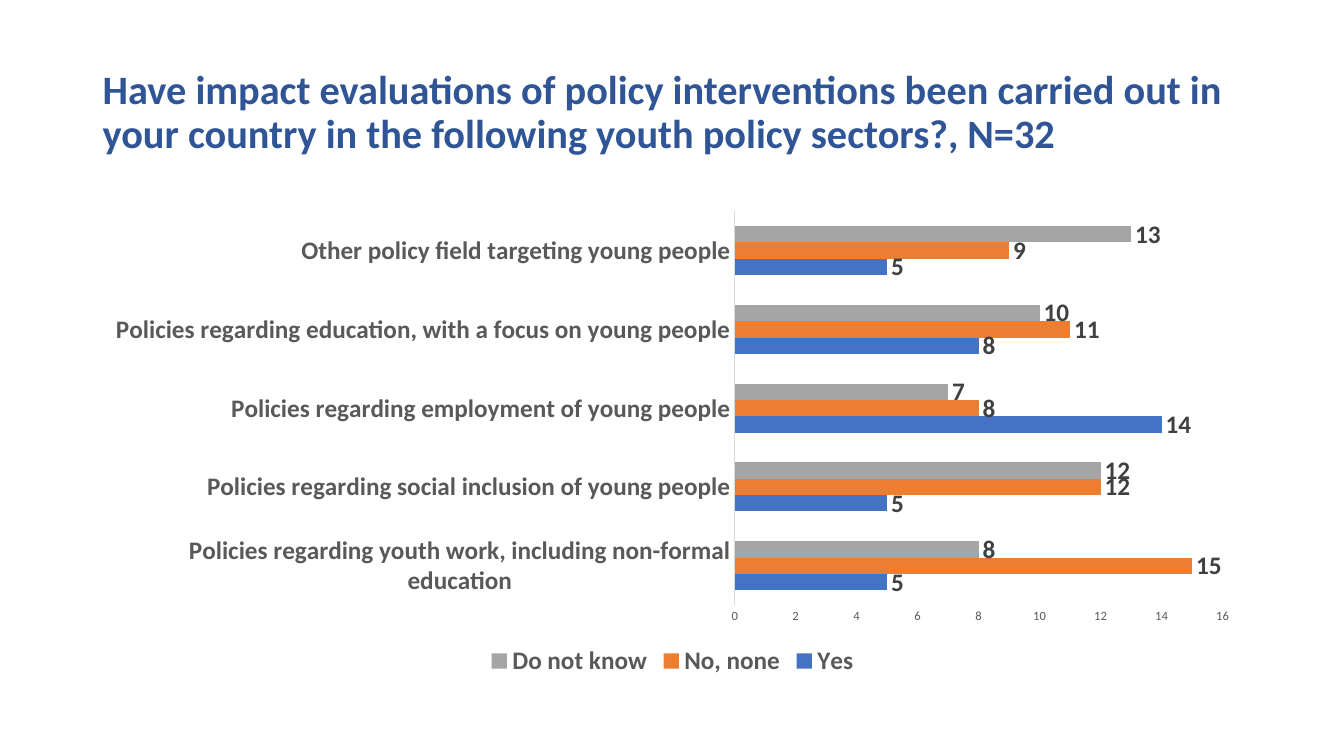
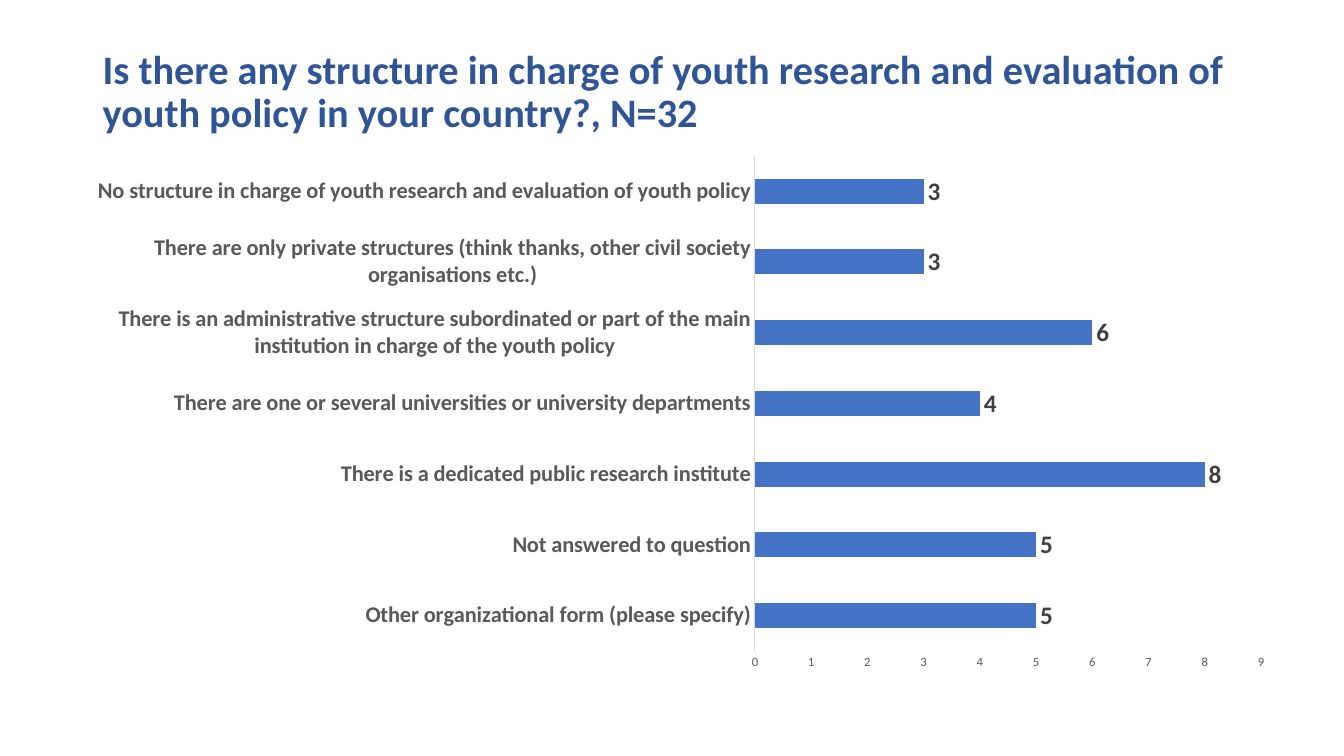
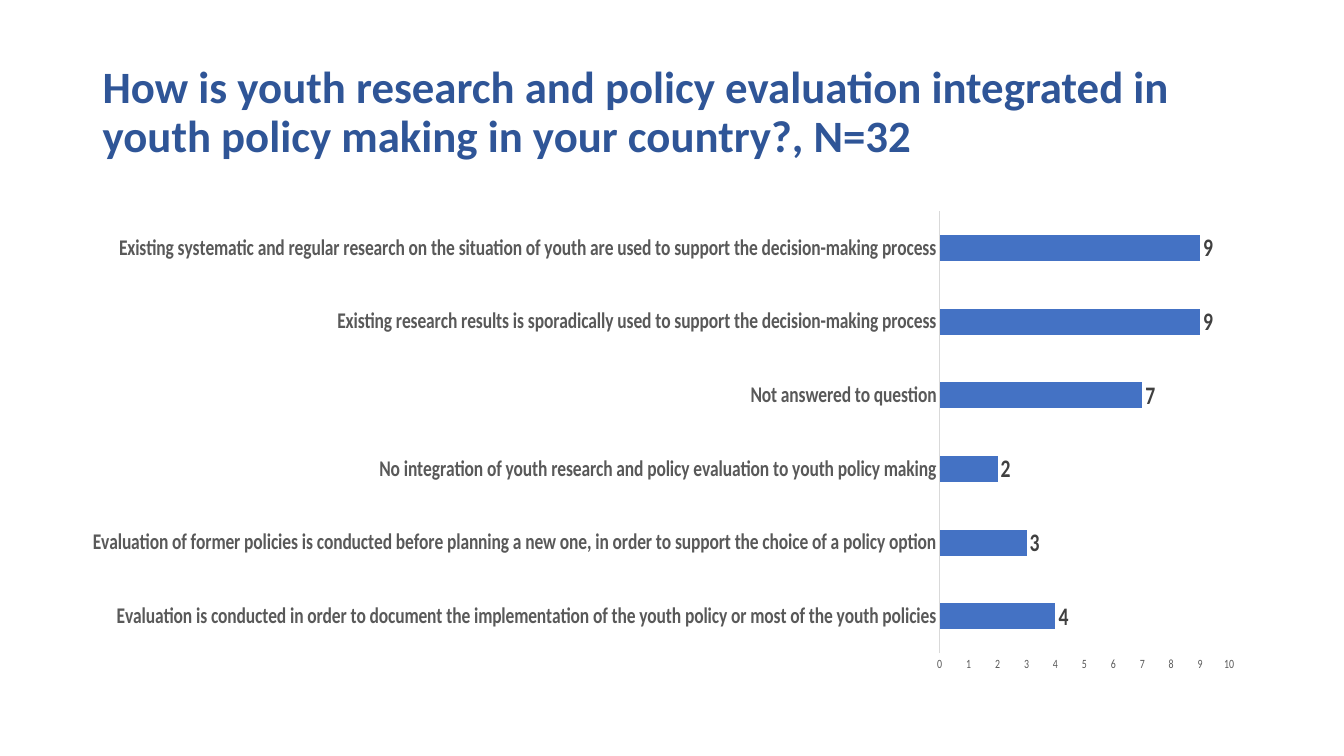
from dataclasses import dataclass

from pptx import Presentation
from pptx.chart.data import CategoryChartData
from pptx.dml.color import RGBColor
from pptx.enum.chart import XL_CHART_TYPE, XL_LABEL_POSITION, XL_LEGEND_POSITION, XL_TICK_MARK
from pptx.enum.text import MSO_ANCHOR
from pptx.util import Inches, Pt

BAR_CLUSTERED = XL_CHART_TYPE.BAR_CLUSTERED
OUTSIDE_END = XL_LABEL_POSITION.OUTSIDE_END
LEGEND_BOTTOM = XL_LEGEND_POSITION.BOTTOM
NO_TICKS = XL_TICK_MARK.NONE
MIDDLE = MSO_ANCHOR.MIDDLE


@dataclass(frozen=True)
class Theme:
    font: str = "Calibri"
    title: str = "2F5597"
    text: str = "595959"
    value: str = "404040"
    axis: str = "D9D9D9"
    black: str = "000000"
    series: tuple = ("4472C4", "ED7D31", "A5A5A5")
    base_size: float = 10
    scale_size: float = 9
    value_size: float = 18
    gap_width: int = 182


THEME = Theme()

SLIDES = [
    {
        "title": "Have impact evaluations of policy interventions been carried out in your country "
                 "in the following youth policy sectors?, N=32",
        "title_size": 28.8,
        "title_box": (0.92, 0.4, 11.5, 1.45),
        "chart_box": (0.92, 2, 11.5, 4.76),
        "category_size": 18,
        "series": ["Yes", "No, none", "Do not know"],
        "rows": [
            ("Policies regarding youth work, including non-formal education", 5, 15, 8),
            ("Policies regarding social inclusion of young people", 5, 12, 12),
            ("Policies regarding employment of young people", 14, 8, 7),
            ("Policies regarding education, with a focus on young people", 8, 11, 10),
            ("Other policy field targeting young people", 5, 9, 13),
        ],
    },
    {
        "title": "Is there any structure in charge of youth research and evaluation of youth policy "
                 "in your country?, N=32",
        "title_size": 28.8,
        "title_box": (0.92, 0.4, 11.5, 1.04),
        "chart_box": (0.73, 1.44, 12.05, 5.31),
        "category_size": 16,
        "series": ["Series 1"],
        "rows": [
            ("Other organizational form (please specify)", 5),
            ("Not answered to question", 5),
            ("There is a dedicated public research institute", 8),
            ("There are one or several universities or university departments", 4),
            ("There is an administrative structure subordinated or part of the main institution "
             "in charge of the youth policy", 6),
            ("There are only private structures (think thanks, other civil society "
             "organisations etc.)", 3),
            ("No structure in charge of youth research and evaluation of youth policy", 3),
        ],
    },
    {
        "title": "How is youth research and policy evaluation integrated in youth policy making "
                 "in your country?, N=32",
        "title_size": 32,
        "title_box": (0.92, 0.4, 11.5, 1.45),
        "chart_box": (0.92, 2, 11.5, 4.76),
        "category_size": 16,
        "series": ["Series 1"],
        "rows": [
            ("Evaluation is conducted in order to document the implementation of the youth policy "
             "or most of the youth policies", 4),
            ("Evaluation of former policies is conducted before planning a new one, in order to "
             "support the choice of a policy option", 3),
            ("No integration of youth research and policy evaluation to youth policy making", 2),
            ("Not answered to question", 7),
            ("Existing research results is sporadically used to support the decision-making "
             "process", 9),
            ("Existing systematic and regular research on the situation of youth are used to "
             "support the decision-making process", 9),
        ],
    },
]


def set_font(font, size, color, bold=False):
    font.name = THEME.font
    font.size = Pt(size)
    font.bold = bold
    font.color.rgb = RGBColor.from_string(color)


def add_title(slide, content):
    shape = slide.shapes.add_textbox(*map(Inches, content["title_box"]))
    frame = shape.text_frame
    frame.word_wrap = True
    frame.vertical_anchor = MIDDLE
    paragraph = frame.paragraphs[0]
    paragraph.text = content["title"]
    paragraph.line_spacing = 0.9
    set_font(paragraph.font, content["title_size"], THEME.title, True)


def style_axis(axis, size, bold):
    axis.has_major_gridlines = False
    axis.major_tick_mark = axis.minor_tick_mark = NO_TICKS
    set_font(axis.tick_labels.font, size, THEME.text, bold)


def style_series(series, color):
    series.format.fill.solid()
    series.format.fill.fore_color.rgb = RGBColor.from_string(color)
    series.invert_if_negative = False
    labels = series.data_labels
    labels.show_value = True
    labels.position = OUTSIDE_END
    set_font(labels.font, THEME.value_size, THEME.value, True)


def add_bar_chart(slide, content):
    categories, *columns = zip(*content["rows"])
    data = CategoryChartData()
    data.categories = categories
    for name, values in zip(content["series"], columns):
        data.add_series(name, values)
    chart = slide.shapes.add_chart(BAR_CLUSTERED, *map(Inches, content["chart_box"]), data).chart
    chart.has_title = False
    set_font(chart.font, THEME.base_size, THEME.black)

    style_axis(chart.category_axis, content["category_size"], True)
    axis_line = chart.category_axis.format.line
    axis_line.color.rgb = RGBColor.from_string(THEME.axis)
    axis_line.width = Pt(0.75)
    style_axis(chart.value_axis, THEME.scale_size, False)
    chart.value_axis.format.line.fill.background()

    plot = chart.plots[0]
    plot.gap_width = THEME.gap_width
    plot.vary_by_categories = False
    for series, color in zip(plot.series, THEME.series):
        style_series(series, color)

    chart.has_legend = len(columns) > 1
    if chart.has_legend:
        chart.legend.position = LEGEND_BOTTOM
        chart.legend.include_in_layout = False
        set_font(chart.legend.font, THEME.value_size, THEME.text, True)


def main():
    presentation = Presentation()
    presentation.slide_width = Inches(13.33)
    presentation.slide_height = Inches(7.5)
    blank_layout = presentation.slide_layouts[6]
    for content in SLIDES:
        slide = presentation.slides.add_slide(blank_layout)
        add_title(slide, content)
        add_bar_chart(slide, content)
    presentation.save("out.pptx")


if __name__ == "__main__":
    main()
